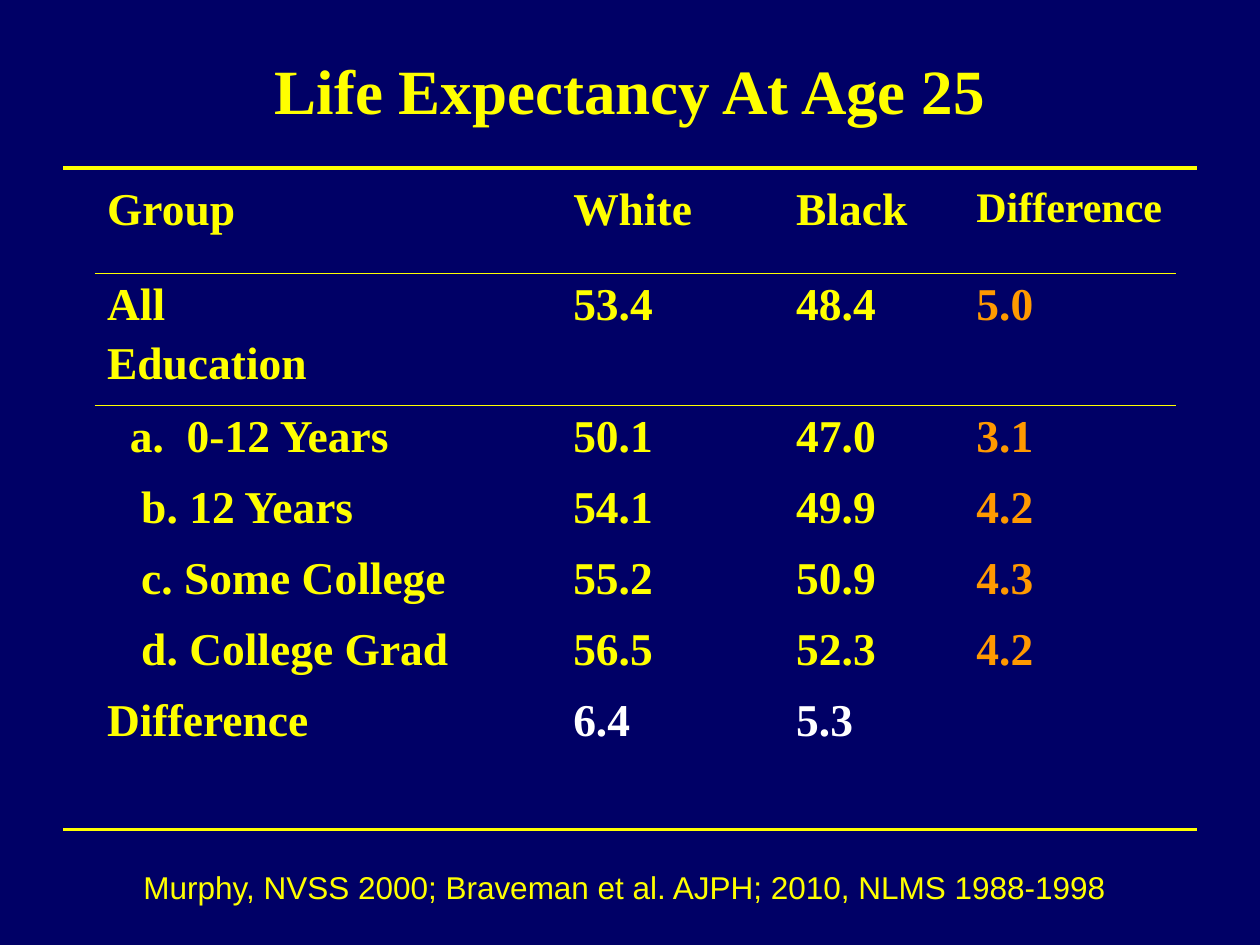
"""Build a slide with a table of life expectancy at age 25 by group."""
from dataclasses import dataclass

from lxml.etree import SubElement
from pptx import Presentation
from pptx.dml.color import RGBColor as Rgb
from pptx.enum.shapes import MSO_CONNECTOR as Link
from pptx.enum.text import MSO_ANCHOR as Anchor, PP_ALIGN as Align
from pptx.oxml import parse_xml
from pptx.oxml.ns import nsdecls, qn
from pptx.util import Pt

GOLD, AMBER, WHITE, NAVY = "FFFF00", "FF9900", "FFFFFF", "000066"
SERIF, SANS = "Times New Roman", "Arial"
PLAIN = "{2D5ABB26-0587-4C30-8999-92F81FD0307C}"
WIDTHS = (266.4, 127.4, 103, 121)
HEIGHTS = (54, 75.6) + (40.6,) * 5


@dataclass(frozen=True)
class Row:
    """One table row: label, figures, their colours and the label's indent."""

    label: str
    white: str
    black: str
    gap: str
    tint: str = GOLD
    gap_tint: str = AMBER
    gap_size: float = 26
    left: float = 0
    hang: float = 0


ROWS = (
    Row("Group", "White", "Black", "Difference", gap_tint=GOLD, gap_size=24),
    Row("All\nEducation", "53.4", "48.4", "5.0"),
    Row("a.\t0-12 Years", "50.1", "47.0", "3.1", left=45.5, hang=32.5),
    Row("b. 12 Years", "54.1", "49.9", "4.2", left=19.5),
    Row("c. Some College", "55.2", "50.9", "4.3", left=19.5),
    Row("d. College Grad", "56.5", "52.3", "4.2", left=19.5),
    Row("Difference", "6.4", "5.3", "", tint=WHITE),
)


def paint(part, tint: str) -> None:
    """Give a fill one solid colour."""
    part.solid()
    part.fore_color.rgb = Rgb.from_string(tint)


def write(frame, text: str, *, size: float = 26, font: str = SERIF, tint: str = GOLD,
          bold: bool = True, align=Align.LEFT, left: float = 0, hang: float = 0) -> None:
    """Write lines of text as formatted paragraphs."""
    for i, line in enumerate(text.split("\n")):
        para = frame.add_paragraph() if i else frame.paragraphs[0]
        para.alignment = align
        if i:
            para.space_before = Pt(size * 0.2)
        if left:
            props = para._p.get_or_add_pPr()
            props.set("marL", str(Pt(left)))
            props.set("indent", str(-Pt(hang)))
        run = para.add_run()
        run.text = line
        run.font.name, run.font.size, run.font.bold = font, Pt(size), bold
        paint(run.font.fill, tint)


def label(slide, box: tuple, text: str, **style) -> None:
    """Add a wrapped text box with centred text."""
    frame = slide.shapes.add_textbox(*map(Pt, box)).text_frame
    frame.word_wrap = True
    frame.vertical_anchor = Anchor.MIDDLE
    write(frame, text, align=Align.CENTER, **style)


def rule(slide, y: float) -> None:
    """Draw a level line across the slide."""
    line = slide.shapes.add_connector(Link.STRAIGHT, Pt(36), Pt(y), Pt(684), Pt(y))
    line.line.width = Pt(2.25)
    paint(line.line.fill, GOLD)
    SubElement(line._element.spPr, qn("a:effectLst"))


def edge(cell, side: str) -> None:
    """Draw a thin border on one side of a cell."""
    cell._tc.get_or_add_tcPr().insert(0, parse_xml(
        f'<a:{side} {nsdecls("a")} w="{Pt(1)}"><a:solidFill>'
        f'<a:srgbClr val="{GOLD}"/></a:solidFill></a:{side}>'))


def grid(slide) -> None:
    """Add the table with its rows of figures."""
    table = slide.shapes.add_table(len(ROWS), len(WIDTHS), Pt(54), Pt(102.2),
                                   Pt(sum(WIDTHS)), Pt(sum(HEIGHTS))).table
    table.first_row = table.horz_banding = False
    table._tbl.tblPr.find(qn("a:tableStyleId")).text = PLAIN
    for col, width in zip(table.columns, WIDTHS):
        col.width = Pt(width)
    for i, (row, height) in enumerate(zip(ROWS, HEIGHTS)):
        table.rows[i].height = Pt(height)
        items = (
            (row.label, dict(left=row.left, hang=row.hang)),
            (row.white, dict(tint=row.tint)),
            (row.black, dict(tint=row.tint)),
            (row.gap, dict(tint=row.gap_tint, size=row.gap_size)),
        )
        for cell, (text, style) in zip(table.rows[i].cells, items):
            cell.fill.background()
            if text:
                write(cell.text_frame, text, **style)
            if i < 2:
                edge(cell, ("lnB", "lnT")[i])


def main() -> None:
    """Build and save the slide."""
    deck = Presentation()
    deck.slide_width, deck.slide_height = Pt(720), Pt(540)
    slide = deck.slides.add_slide(deck.slide_layouts[6])
    paint(slide.background.fill, NAVY)
    label(slide, (54, 6, 612, 90), "Life Expectancy At Age 25", size=36)
    grid(slide)
    for y in (96, 474):
        rule(slide, y)
    label(slide, (54, 492, 606, 29),
          "Murphy, NVSS 2000; Braveman et al. AJPH; 2010, NLMS 1988-1998",
          size=18, font=SANS, bold=False)
    deck.save("out.pptx")


if __name__ == "__main__":
    main()
